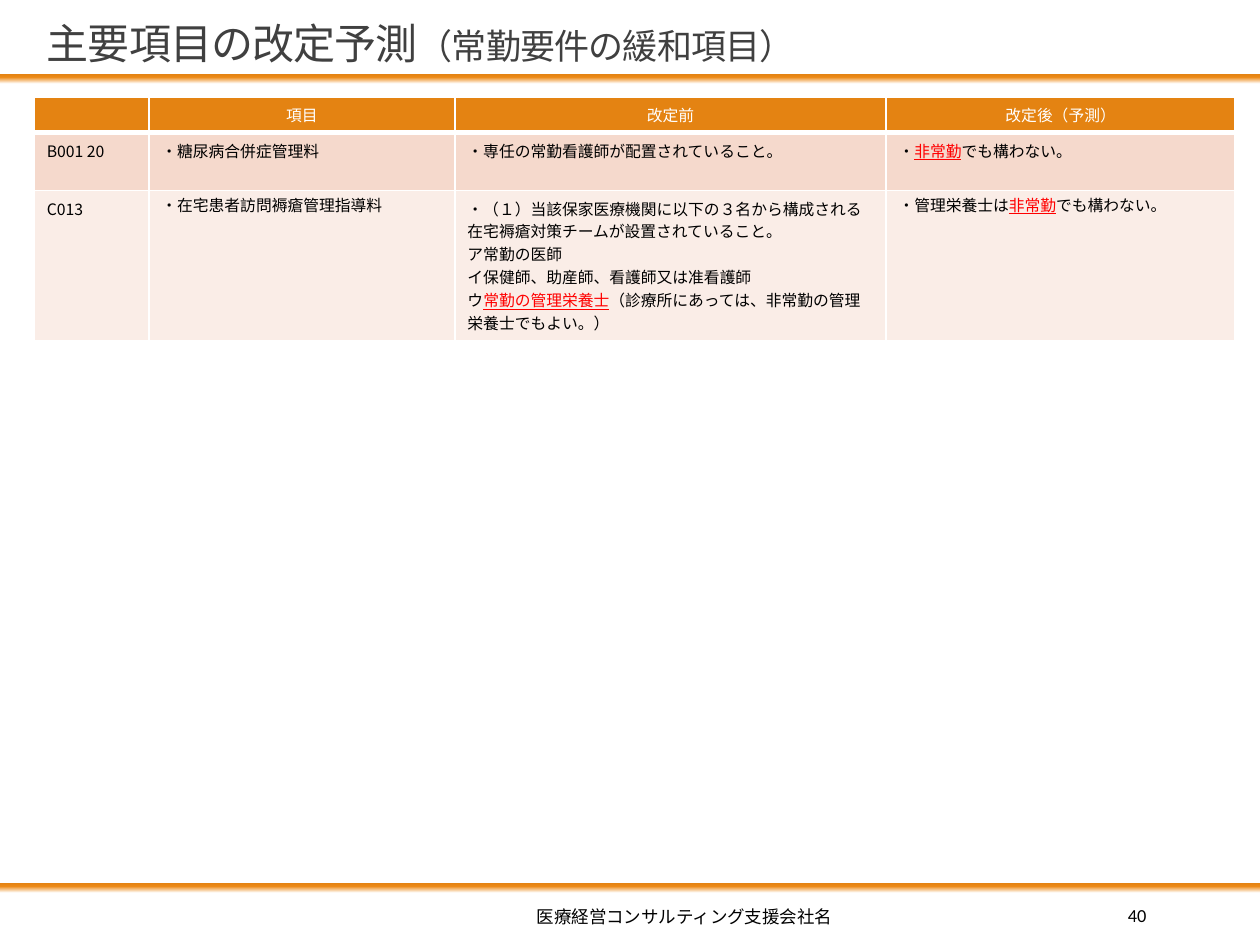
from dataclasses import dataclass

from lxml.etree import SubElement
from pptx import Presentation
from pptx.dml.color import RGBColor
from pptx.enum.shapes import MSO_SHAPE
from pptx.enum.text import MSO_ANCHOR, MSO_AUTO_SIZE, PP_ALIGN
from pptx.oxml.ns import qn
from pptx.util import Cm, Pt


@dataclass(frozen=True)
class Theme:
    accent: str = "E48312"
    accent_light: str = "ED8A17"
    band_dark: str = "F5D9CC"
    band_light: str = "FAEDE7"
    title: str = "404040"
    text: str = "000000"
    white: str = "FFFFFF"
    alert: str = "FF0000"
    title_font: str = "Arial"
    body_font: str = "Noto Sans CJK JP"
    latin_font: str = "Calibri"
    title_size: float = 24
    subtitle_size: float = 20
    table_size: float = 9
    footer_size: float = 10
    number_size: float = 10.5


THEME = Theme()


@dataclass(frozen=True)
class Span:
    text: str
    alert: bool = False


@dataclass(frozen=True)
class CellText:
    """Each paragraph is a tuple of spans."""
    paragraphs: tuple = ()
    font: str = THEME.body_font


@dataclass(frozen=True)
class TableRow:
    height: float
    fill: str
    cells: tuple
    color: str = THEME.text
    align: PP_ALIGN = PP_ALIGN.LEFT
    bottom_border: float = 1
    top_border: float = 1


def line(*spans):
    return tuple(Span(span) if isinstance(span, str) else span for span in spans)


COLUMN_WIDTHS = (2.31, 6.17, 8.69, 7.04)
PART_TIME = Span("非常勤", alert=True)
ROWS = (
    TableRow(0.71, THEME.accent,
             (CellText(), CellText((line("項目"),)), CellText((line("改定前"),)),
              CellText((line("改定後（予測）"),))),
             color=THEME.white, align=PP_ALIGN.CENTER, bottom_border=3),
    TableRow(1.17, THEME.band_dark,
             (CellText((line("B001 20"),)),
              CellText((line("・糖尿病合併症管理料"),)),
              CellText((line("・専任の常勤看護師が配置されていること。"),)),
              CellText((line("・", PART_TIME, "でも構わない。"),))),
             top_border=3),
    TableRow(3.02, THEME.band_light,
             (CellText((line("C013"),)),
              CellText((line("・在宅患者訪問褥瘡管理指導料"),), THEME.latin_font),
              CellText((
                  line("・（１）当該保家医療機関に以下の３名から構成される"
                       "在宅褥瘡対策チームが設置されていること。"),
                  line("ア常勤の医師"),
                  line("イ保健師、助産師、看護師又は准看護師"),
                  line("ウ", Span("常勤の管理栄養士", alert=True),
                       "（診療所にあっては、非常勤の管理栄養士でもよい。）"))),
              CellText((line("・管理栄養士は", PART_TIME, "でも構わない。"),),
                       THEME.latin_font))),
)


def add_text(paragraph, text: str, *, font: str, size: float, color: str,
             underline: bool = False, spacing: float = 0) -> None:
    """Append one formatted run to a paragraph."""
    run = paragraph.add_run()
    run.text = text
    run.font.name = font
    run.font.size = Pt(size)
    run.font.bold = False
    run.font.underline = underline
    run.font.color.rgb = RGBColor.from_string(color)
    properties = run.font._element
    SubElement(properties, qn("a:ea"), typeface=font)
    if spacing:
        properties.set("spc", str(int(spacing * 100)))


def add_rule(slide, top: float) -> None:
    """Draw a full-width bar that fades from the accent to white."""
    shape = slide.shapes.add_shape(MSO_SHAPE.RECTANGLE, 0, Cm(top), Cm(25.4), Cm(1.19))
    shape.shadow.inherit = False
    shape.line.fill.background()
    shape.fill.gradient()
    shape.fill.gradient_angle = 90
    stops = shape._element.spPr.find(qn("a:gradFill")).find(qn("a:gsLst"))
    for stop in list(stops):
        stops.remove(stop)
    for position, color in ((84, THEME.white), (95, THEME.accent_light), (100, THEME.accent)):
        stop = SubElement(stops, qn("a:gs"), pos=str(position * 1000))
        SubElement(stop, qn("a:srgbClr"), val=color)


def add_label(slide, text: str, left: float, top: float, width: float, height: float,
              *, align: PP_ALIGN, anchor: MSO_ANCHOR, wrap: bool, **text_format) -> None:
    frame = slide.shapes.add_textbox(Cm(left), Cm(top), Cm(width), Cm(height)).text_frame
    frame.word_wrap = wrap
    frame.vertical_anchor = anchor
    frame.paragraphs[0].alignment = align
    add_text(frame.paragraphs[0], text, **text_format)


def set_title(slide) -> None:
    title = slide.shapes.title
    title.left, title.top, title.width, title.height = Cm(0.69), Cm(0.41), Cm(24.03), Cm(1.09)
    frame = title.text_frame
    frame.auto_size = MSO_AUTO_SIZE.NONE
    frame.word_wrap = True
    frame.vertical_anchor = MSO_ANCHOR.BOTTOM
    paragraph = frame.paragraphs[0]
    paragraph.alignment = PP_ALIGN.LEFT
    paragraph.line_spacing = 0.85
    for text, size in (("主要項目の改定予測", THEME.title_size),
                       ("（常勤要件の緩和項目）", THEME.subtitle_size)):
        add_text(paragraph, text, font=THEME.title_font, size=size,
                 color=THEME.title, spacing=-0.5)


def set_borders(cell, top: float, bottom: float) -> None:
    properties = cell._tc.get_or_add_tcPr()
    for side, width in (("L", 1), ("R", 1), ("T", top), ("B", bottom)):
        border = SubElement(properties, qn(f"a:ln{side}"), w=str(Pt(width)))
        SubElement(SubElement(border, qn("a:solidFill")), qn("a:srgbClr"), val=THEME.white)


def fill_cell(cell, content: CellText, row: TableRow) -> None:
    set_borders(cell, row.top_border, row.bottom_border)
    cell.fill.solid()
    cell.fill.fore_color.rgb = RGBColor.from_string(row.fill)
    frame = cell.text_frame
    frame.paragraphs[0].font.size = Pt(THEME.table_size)
    for index, spans in enumerate(content.paragraphs):
        paragraph = frame.add_paragraph() if index else frame.paragraphs[0]
        paragraph.alignment = row.align
        for span in spans:
            add_text(paragraph, span.text, font=content.font, size=THEME.table_size,
                     color=THEME.alert if span.alert else row.color, underline=span.alert)


def add_revision_table(slide) -> None:
    table = slide.shapes.add_table(
        len(ROWS), len(COLUMN_WIDTHS), Cm(0.69), Cm(1.96),
        Cm(sum(COLUMN_WIDTHS)), Cm(sum(row.height for row in ROWS))).table
    for column, width in zip(table.columns, COLUMN_WIDTHS):
        column.width = Cm(width)
    for table_row, row in zip(table.rows, ROWS):
        table_row.height = Cm(row.height)
        for cell, content in zip(table_row.cells, row.cells):
            fill_cell(cell, content, row)


def main() -> None:
    presentation = Presentation()
    presentation.slide_width, presentation.slide_height = Cm(25.4), Cm(19.05)
    slide = presentation.slides.add_slide(presentation.slide_layouts[5])

    # Footer rule, company name and header rule
    add_rule(slide, 17.81)
    add_label(slide, "医療経営コンサルティング支援会社名", 10.57, 18.14, 6.58, 0.69,
              align=PP_ALIGN.LEFT, anchor=MSO_ANCHOR.TOP, wrap=False,
              font=THEME.body_font, size=THEME.footer_size, color=THEME.text)
    add_rule(slide, 1.5)

    # Title, table and page number
    set_title(slide)
    add_revision_table(slide)
    add_label(slide, "40", 20.62, 17.93, 2.74, 1.02,
              align=PP_ALIGN.RIGHT, anchor=MSO_ANCHOR.MIDDLE, wrap=True,
              font=THEME.latin_font, size=THEME.number_size, color=THEME.text)

    presentation.save("out.pptx")


if __name__ == "__main__":
    main()
